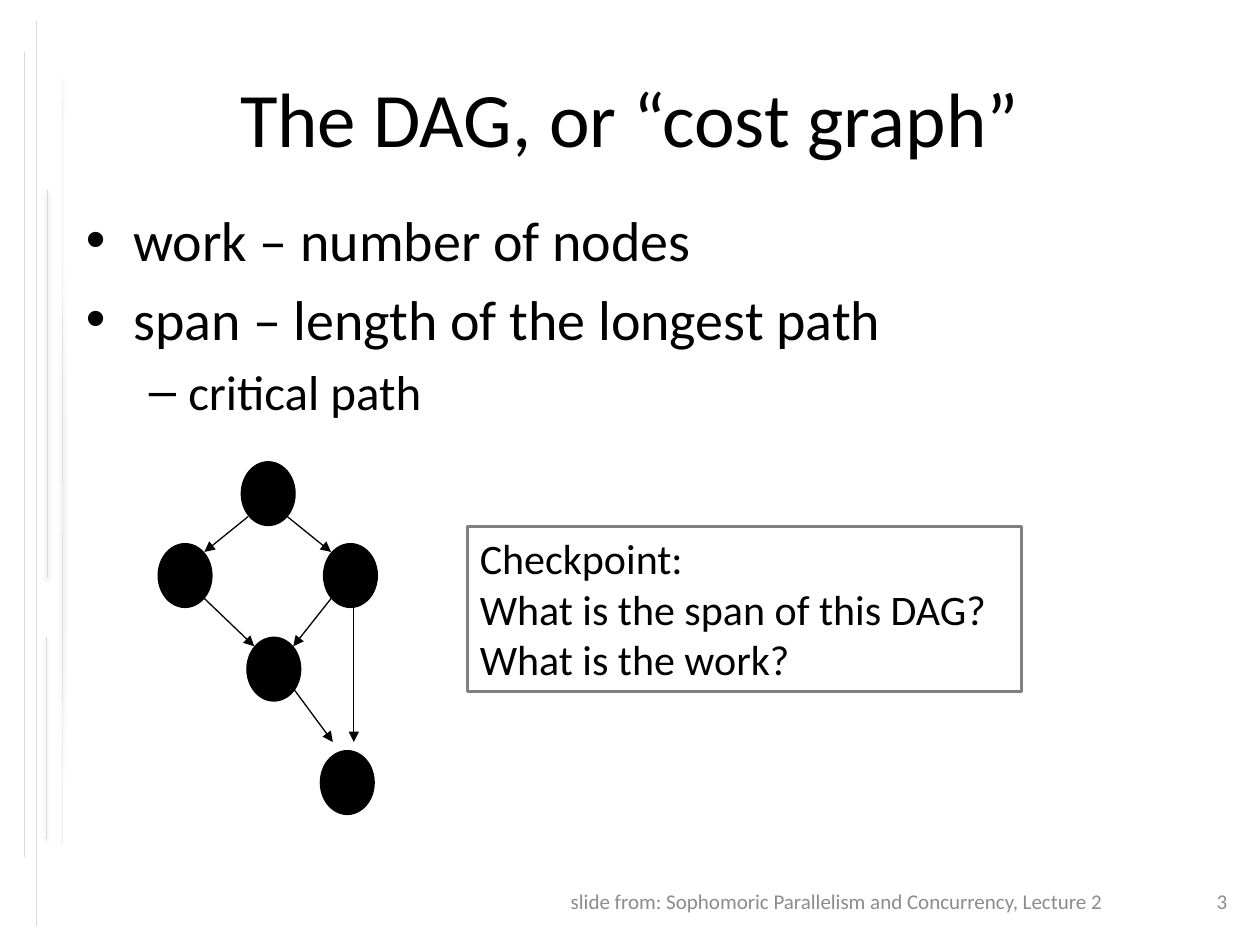
import pptx
import pptx.util
import pptx.dml.color
import pptx.enum.shapes
import pptx.enum.text
import pptx.oxml
import pptx.oxml.ns
import lxml.etree

Pt = pptx.util.Pt
COLORS = {"text": "000000", "node": "000000", "rail": "D9D9D9", "footer": "8C8C8C", "frame": "808080"}
ALIGN = pptx.enum.text.PP_ALIGN
ANCHOR = pptx.enum.text.MSO_ANCHOR
NAMESPACE = pptx.oxml.ns.nsdecls("a")


def add_text(text, box, size, color="text", align=ALIGN.LEFT, anchor=ANCHOR.TOP, bullets=None, frame=None):
    shape = slide.shapes.add_textbox(*[Pt(value) for value in box])
    if frame:
        shape.line.color.rgb = pptx.dml.color.RGBColor.from_string(COLORS[frame])
        shape.line.width = Pt(1.5)
    shape.text_frame.word_wrap = True
    shape.text_frame.vertical_anchor = anchor
    shape.text_frame.text = text
    for index, paragraph in enumerate(shape.text_frame.paragraphs):
        paragraph.alignment = align
        paragraph.font.name = "Calibri"
        paragraph.font.size = Pt(size)
        paragraph.font.color.rgb = pptx.dml.color.RGBColor.from_string(COLORS[color])
        if bullets:
            symbol, level, margin, indent, bullet_size = bullets[index]
            paragraph.level = level
            paragraph.font.size = Pt(bullet_size)
            paragraph.space_before = Pt(bullet_size * 0.2)
            properties = paragraph._p.get_or_add_pPr()
            properties.set("marL", str(Pt(margin)))
            properties.set("indent", str(Pt(indent)))
            font = pptx.oxml.parse_xml(f'<a:buFont {NAMESPACE} typeface="Arial"/>')
            bullet = pptx.oxml.parse_xml(f'<a:buChar {NAMESPACE} char="{symbol}"/>')
            properties.insert_element_before(font, "a:buChar", "a:tabLst", "a:defRPr", "a:extLst")
            properties.insert_element_before(bullet, "a:tabLst", "a:defRPr", "a:extLst")


def add_line(shapes, ends, color, width, arrow=False, shadow=False):
    connector = shapes.add_connector(
        pptx.enum.shapes.MSO_CONNECTOR.STRAIGHT, *[Pt(value) for value in ends])
    connector.line.color.rgb = pptx.dml.color.RGBColor.from_string(COLORS[color])
    connector.line.width = Pt(width)
    if arrow:
        lxml.etree.SubElement(connector.line._get_or_add_ln(), pptx.oxml.ns.qn("a:tailEnd"), type="triangle")
    effects = lxml.etree.SubElement(connector._element.spPr, pptx.oxml.ns.qn("a:effectLst"))
    if shadow:
        effects.append(pptx.oxml.parse_xml(
            f'<a:outerShdw {NAMESPACE} blurRad="{Pt(3.1)}" dist="{Pt(1.6)}" dir="5400000" rotWithShape="0">'
            '<a:srgbClr val="000000"><a:alpha val="38000"/></a:srgbClr></a:outerShdw>'))


presentation = pptx.Presentation()
presentation.slide_width = Pt(720)
presentation.slide_height = Pt(540)
slide = presentation.slides.add_slide(presentation.slide_layouts[6])

rails = [
    (36, 44.6, 35.5, 483),
    (13.6, 29.5, 13.6, 489.6),
    (26.9, 108.7, 26.9, 329.8),
    (20.8, 12.2, 20.8, 529.2),
    (26.5, 364.3, 26.5, 479.5),
]
for rail in rails:
    add_line(slide.shapes, rail, "rail", 0.25, shadow=True)

add_text("The DAG, or “cost graph”", (36, 21.6, 648, 90), 44, align=ALIGN.CENTER, anchor=ANCHOR.MIDDLE)
add_text("work – number of nodes\nspan – length of the longest path\ncritical path", (42, 114, 642, 138), 32,
         bullets=[("•", 0, 27, -27, 32), ("•", 0, 27, -27, 32), ("–", 1, 58.5, -22.5, 28)])

graph = slide.shapes.add_group_shape()
nodes = [(137.5, 263.5), (90, 310.3), (184.5, 310.3), (140.7, 363.8), (182.7, 428.6)]
for left, top in nodes:
    node = graph.shapes.add_shape(
        pptx.enum.shapes.MSO_SHAPE.OVAL, Pt(left), Pt(top), Pt(31.5), Pt(37.2))
    node.shadow.inherit = False
    node.fill.solid()
    node.fill.fore_color.rgb = pptx.dml.color.RGBColor.from_string(COLORS["node"])
    node.line.fill.background()

edges = [
    (141.8, 295.2, 116.8, 315.4),
    (164.2, 295.2, 189.2, 315.4),
    (189.2, 342, 167.6, 369.3),
    (116.8, 342, 145.3, 369.3),
    (202.2, 345.6, 202.2, 424),
    (167.9, 393.8, 190.2, 424),
]
for edge in edges:
    add_line(graph.shapes, edge, "node", 0.75, arrow=True)

add_text("3", (678.2, 500.4, 40.3, 28.8), 12, color="footer", align=ALIGN.CENTER, anchor=ANCHOR.MIDDLE)
add_text("slide from: Sophomoric Parallelism and Concurrency, Lecture 2", (224.6, 500.4, 412.6, 28.8), 12,
         color="footer", align=ALIGN.RIGHT, anchor=ANCHOR.MIDDLE)
add_text("Checkpoint:\nWhat is the span of this DAG?\nWhat is the work?", (267.1, 301, 316.8, 94.3), 24,
         frame="frame")

presentation.save("out.pptx")
